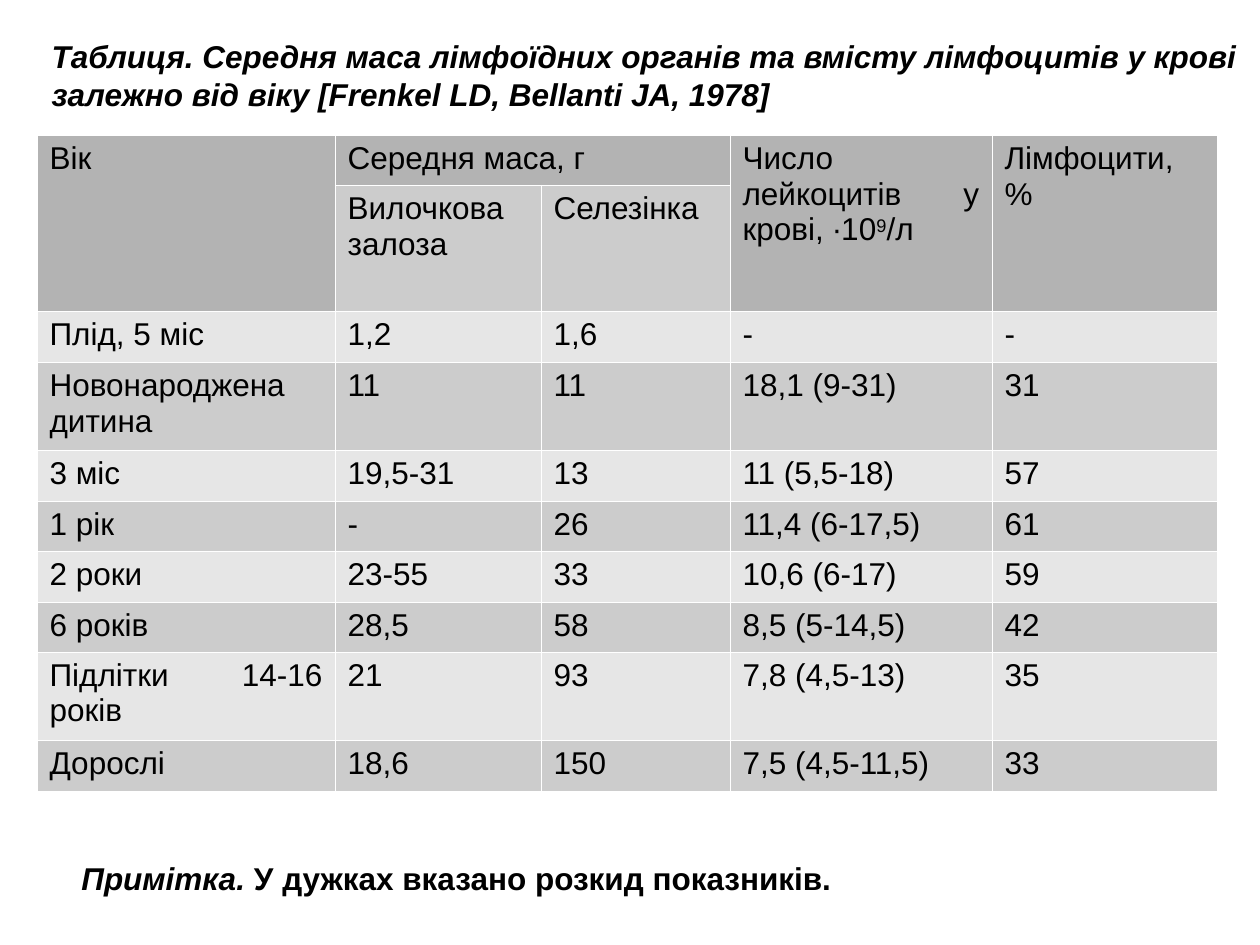
from lxml import etree
from pptx import Presentation
from pptx.dml.color import RGBColor
from pptx.enum.text import MSO_ANCHOR, MSO_AUTO_SIZE, PP_ALIGN
from pptx.oxml.ns import qn
from pptx.util import Pt

TOP = MSO_ANCHOR.TOP
NO_FIT = MSO_AUTO_SIZE.NONE
JUSTIFY = PP_ALIGN.JUSTIFY
TITLE_ONLY = 5
SCALE = 914400 / 126
HAIR = 762

TITLE = ["Таблиця. Середня маса лімфоїдних органів та вмісту лімфоцитів у крові ",
         "залежно від віку [Frenkel LD, Bellanti JA, 1978]"]
NOTE = [("Примітка. ", {"italic": True}),
        ("У дужках вказано розкид показників.", {})]
COUNT = [("Число лейкоцитів у крові, ∙10", {}), ("9", {"base": 25}), ("/л", {})]
COLS = [298, 206, 189, 262, 225]
ROWS = [50, 126, 51, 88, 51, 50, 51, 50, 88, 51]
HEAD = [["Вік", "Середня маса, г", None, COUNT, "Лімфоцити, %"],
        [None, "Вилочкова залоза", "Селезінка", None, None]]
SPANS = [(0, 0, 1, 0), (0, 1, 0, 2), (0, 3, 1, 3), (0, 4, 1, 4)]
DATA = [
    ["Плід, 5 міс", "1,2", "1,6", "-", "-"],
    ["Новонароджена дитина", "11", "11", "18,1 (9-31)", "31"],
    ["3 міс", "19,5-31", "13", "11 (5,5-18)", "57"],
    ["1 рік", "-", "26", "11,4 (6-17,5)", "61"],
    ["2 роки", "23-55", "33", "10,6 (6-17)", "59"],
    ["6 років", "28,5", "58", "8,5 (5-14,5)", "42"],
    ["Підлітки 14-16 років", "21", "93", "7,8 (4,5-13)", "35"],
    ["Дорослі", "18,6", "150", "7,5 (4,5-11,5)", "33"],
]


def px(num):
    return round(num * SCALE)


def color(code):
    return RGBColor.from_string(code)


def write(para, text, font="Arial", size=18, ink="000000",
          bold=False, italic=False, base=0):
    """Add one run; base raises it by a percentage."""
    run = para.add_run()
    run.text = text
    run.font.name = font
    run.font.size = Pt(size)
    run.font.color.rgb = color(ink)
    run.font.bold = bold
    run.font.italic = italic
    if base:
        run.font._element.set("baseline", str(base * 1000))


def edge(cell, code):
    """Draw a hairline on all four sides of a cell."""
    props = cell._tc.get_or_add_tcPr()
    for spot, side in enumerate(("lnL", "lnR", "lnT", "lnB")):
        line = etree.Element(qn(f"a:{side}"), w=str(HAIR))
        fill = etree.SubElement(line, qn("a:solidFill"))
        etree.SubElement(fill, qn("a:srgbClr"), val=code)
        props.insert(spot, line)


class Deck:
    """Holds the table colours and the current slide."""
    head = "B3B3B3"
    bands = ("CCCCCC", "E6E6E6")
    rule = "FFFFFF"

    def __init__(self, wide, high):
        self.file = Presentation()
        self.file.slide_width = px(wide)
        self.file.slide_height = px(high)
        self.slide = self.file.slides.add_slide(self.file.slide_layouts[TITLE_ONLY])

    def title(self, lines, *box):
        shape = self.slide.shapes.title
        shape.left, shape.top, shape.width, shape.height = map(px, box)
        frame = shape.text_frame
        frame.vertical_anchor = TOP
        frame.auto_size = NO_FIT
        for spot, text in enumerate(lines):
            para = frame.add_paragraph() if spot else frame.paragraphs[0]
            para.alignment = JUSTIFY
            write(para, text, bold=True, italic=True)

    def note(self, parts, *box):
        frame = self.slide.shapes.add_textbox(*map(px, box)).text_frame
        frame.word_wrap = True
        para = frame.paragraphs[0]
        para.alignment = JUSTIFY
        for text, form in parts:
            write(para, text, bold=True, **form)

    def table(self, left, top, cols, rows, cells, spans):
        grid = self.slide.shapes.add_table(
            len(rows), len(cols), px(left), px(top), px(sum(cols)), px(sum(rows))).table
        grid.first_row = grid.horz_banding = False
        for col, wide in zip(grid.columns, cols):
            col.width = px(wide)
        for row, high in zip(grid.rows, rows):
            row.height = px(high)
        for r1, c1, r2, c2 in spans:
            grid.cell(r1, c1).merge(grid.cell(r2, c2))
        for r, line in enumerate(cells):
            for c, text in enumerate(line):
                self.cell(grid.cell(r, c), text, self.bands[(r + 1) % 2] if r else self.head)

    def cell(self, cell, text, fill):
        cell.fill.solid()
        cell.fill.fore_color.rgb = color(fill)
        edge(cell, self.rule)
        if text is None:
            return
        para = cell.text_frame.paragraphs[0]
        para.alignment = JUSTIFY
        for part, form in [(text, {})] if isinstance(text, str) else text:
            write(para, part, **form)


def main():
    deck = Deck(1260, 945)
    deck.title(TITLE, 39, 31, 1221, 88)
    deck.table(37, 135, COLS, ROWS, HEAD + DATA, SPANS)
    deck.note(NOTE, 69, 853, 776, 50)
    deck.file.save("out.pptx")


if __name__ == "__main__":
    main()
